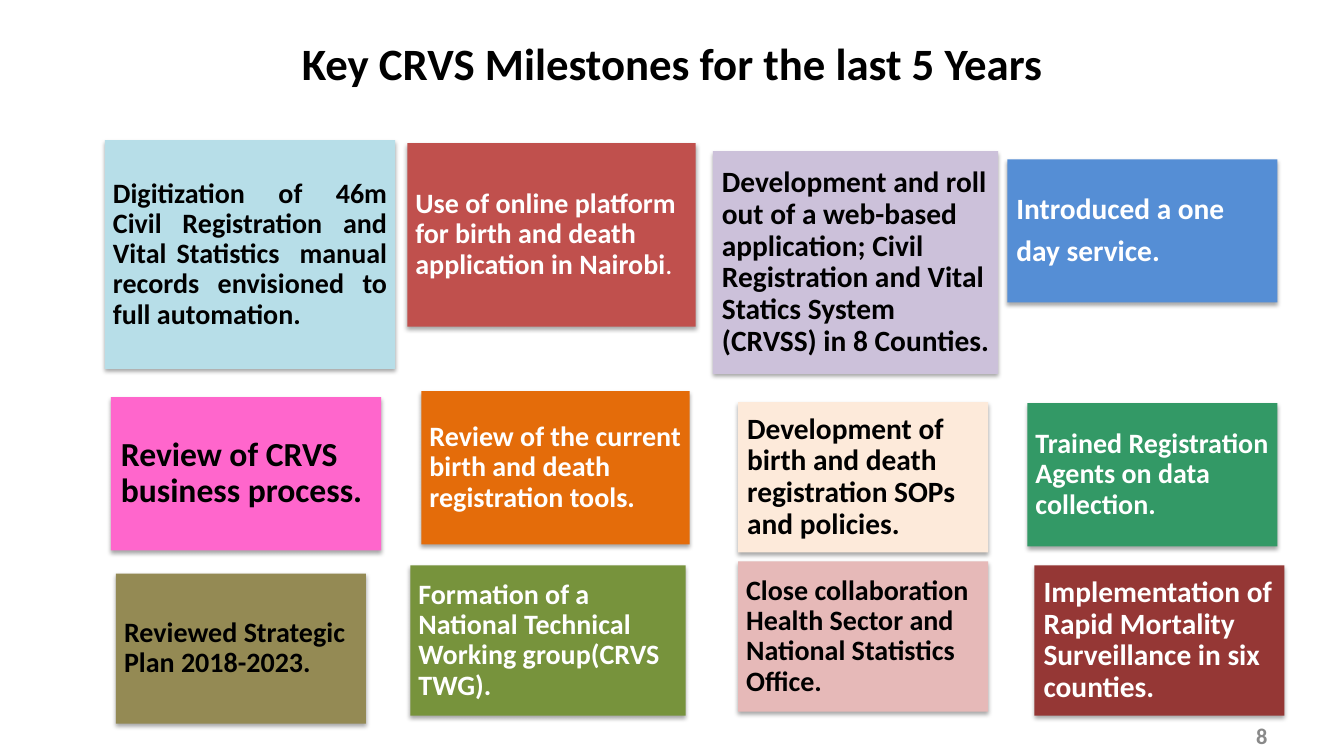
from dataclasses import dataclass

import lxml.etree
import pptx
import pptx.dml.color
import pptx.enum.shapes
import pptx.enum.text
import pptx.oxml.ns
import pptx.util

Align = pptx.enum.text.PP_ALIGN
Inches = pptx.util.Inches


@dataclass(frozen=True)
class Theme:
    font: str = "Calibri"
    dark: str = "000000"
    light: str = "FFFFFF"
    muted: str = "898989"
    title_size: int = 32
    number_size: int = 16
    small: int = 20
    medium: int = 21
    large: int = 24
    aqua: str = "B7DEE8"
    red: str = "C0504D"
    lavender: str = "CCC1DA"
    blue: str = "558ED5"
    pink: str = "FF66CC"
    orange: str = "E46C0A"
    cream: str = "FDEADA"
    green: str = "339966"
    khaki: str = "948A54"
    olive: str = "77933C"
    rose: str = "E6B9B8"
    maroon: str = "953735"


THEME = Theme()


@dataclass(frozen=True)
class Milestone:
    left: float
    top: float
    width: float
    height: float
    fill: str
    color: str
    size: int
    text: str
    align: Align = Align.LEFT
    plain_ending: str = ""


MILESTONES = [
    Milestone(1.04, 1.39, 2.88, 2.27, THEME.aqua, THEME.dark, THEME.small,
              "Digitization of 46m Civil Registration and Vital Statistics  manual "
              "records envisioned to full automation.", align=Align.JUSTIFY),
    Milestone(4.04, 1.42, 2.86, 1.82, THEME.red, THEME.light, THEME.small,
              "Use of online platform for birth and death application in Nairobi",
              plain_ending="."),
    Milestone(7.07, 1.5, 2.83, 2.21, THEME.lavender, THEME.dark, THEME.medium,
              "Development and roll out of a web-based application; Civil Registration "
              "and Vital Statics System (CRVSS) in 8 Counties."),
    Milestone(9.99, 1.58, 2.68, 1.42, THEME.blue, THEME.light, THEME.medium,
              "Introduced a one\nday service."),
    Milestone(1.1, 3.94, 2.68, 1.52, THEME.pink, THEME.dark, THEME.large,
              "Review of CRVS business process."),
    Milestone(4.18, 3.88, 2.66, 1.52, THEME.orange, THEME.light, THEME.small,
              "Review of the current birth and death registration tools."),
    Milestone(7.32, 3.99, 2.48, 1.49, THEME.cream, THEME.dark, THEME.medium,
              "Development of birth and death registration SOPs and policies."),
    Milestone(10.19, 4, 2.48, 1.42, THEME.green, THEME.light, THEME.small,
              "Trained Registration Agents on data collection."),
    Milestone(1.15, 5.69, 2.48, 1.49, THEME.khaki, THEME.dark, THEME.small,
              "Reviewed Strategic Plan 2018-2023."),
    Milestone(4.07, 5.61, 2.73, 1.49, THEME.olive, THEME.light, THEME.small,
              "Formation of a National Technical Working group(CRVS TWG)."),
    Milestone(7.32, 5.57, 2.48, 1.49, THEME.rose, THEME.dark, THEME.small,
              "Close collaboration Health Sector and National Statistics Office."),
    Milestone(10.26, 5.61, 2.48, 1.49, THEME.maroon, THEME.light, THEME.medium,
              "Implementation of Rapid Mortality Surveillance in six counties."),
]


def write_text(frame, text: str, size: int, color: str, align: Align) -> None:
    frame.text = text
    frame.word_wrap = True
    frame.vertical_anchor = pptx.enum.text.MSO_ANCHOR.MIDDLE
    for para in frame.paragraphs:
        para.alignment = align
        for span in para.runs:
            style_span(span, size, color)


def style_span(span, size: int, color: str, bold: bool = True) -> None:
    span.font.name = THEME.font
    span.font.size = pptx.util.Pt(size)
    span.font.bold = bold
    span.font.color.rgb = pptx.dml.color.RGBColor.from_string(color)


def add_soft_shadow(box) -> None:
    """Drop a faint black shadow straight below the box."""
    qn = pptx.oxml.ns.qn
    box.shadow.inherit = False
    effects = box.fill._xPr.find(qn("a:effectLst"))
    shadow = lxml.etree.SubElement(effects, qn("a:outerShdw"), blurRad="40000",
                                   dist="23000", dir="5400000", rotWithShape="0")
    shade = lxml.etree.SubElement(shadow, qn("a:srgbClr"), val=THEME.dark)
    lxml.etree.SubElement(shade, qn("a:alpha"), val="35000")


def add_milestone(page, item: Milestone) -> None:
    box = page.shapes.add_shape(
        pptx.enum.shapes.MSO_SHAPE.RECTANGLE, Inches(item.left), Inches(item.top),
        Inches(item.width), Inches(item.height))
    box.fill.solid()
    box.fill.fore_color.rgb = pptx.dml.color.RGBColor.from_string(item.fill)
    box.line.fill.background()
    add_soft_shadow(box)

    frame = box.text_frame
    write_text(frame, item.text, item.size, item.color, item.align)
    inset = Inches(round(item.size / 240, 2))
    frame.margin_left = frame.margin_right = inset
    frame.margin_top = frame.margin_bottom = inset
    for para in frame.paragraphs:
        para.line_spacing = 0.9
        para.space_after = pptx.util.Pt(0.35 * item.size)
    if item.plain_ending:
        span = frame.paragraphs[-1].add_run()
        span.text = item.plain_ending
        style_span(span, item.size, item.color, bold=False)


def add_label(page, left: float, top: float, width: float, height: float,
              text: str, size: int, color: str, align: Align) -> None:
    label = page.shapes.add_textbox(Inches(left), Inches(top), Inches(width), Inches(height))
    write_text(label.text_frame, text, size, color, align)


def main() -> None:
    deck = pptx.Presentation()
    deck.slide_width = Inches(13.33)
    deck.slide_height = Inches(7.5)
    page = deck.slides.add_slide(deck.slide_layouts[6])
    add_label(page, 0.67, 0, 12, 1.25, "Key CRVS Milestones for the last 5 Years",
              THEME.title_size, THEME.dark, Align.CENTER)
    for item in MILESTONES:
        add_milestone(page, item)
    add_label(page, 9.56, 7.1, 3.11, 0.4, "8", THEME.number_size, THEME.muted, Align.RIGHT)
    deck.save("out.pptx")


if __name__ == "__main__":
    main()
